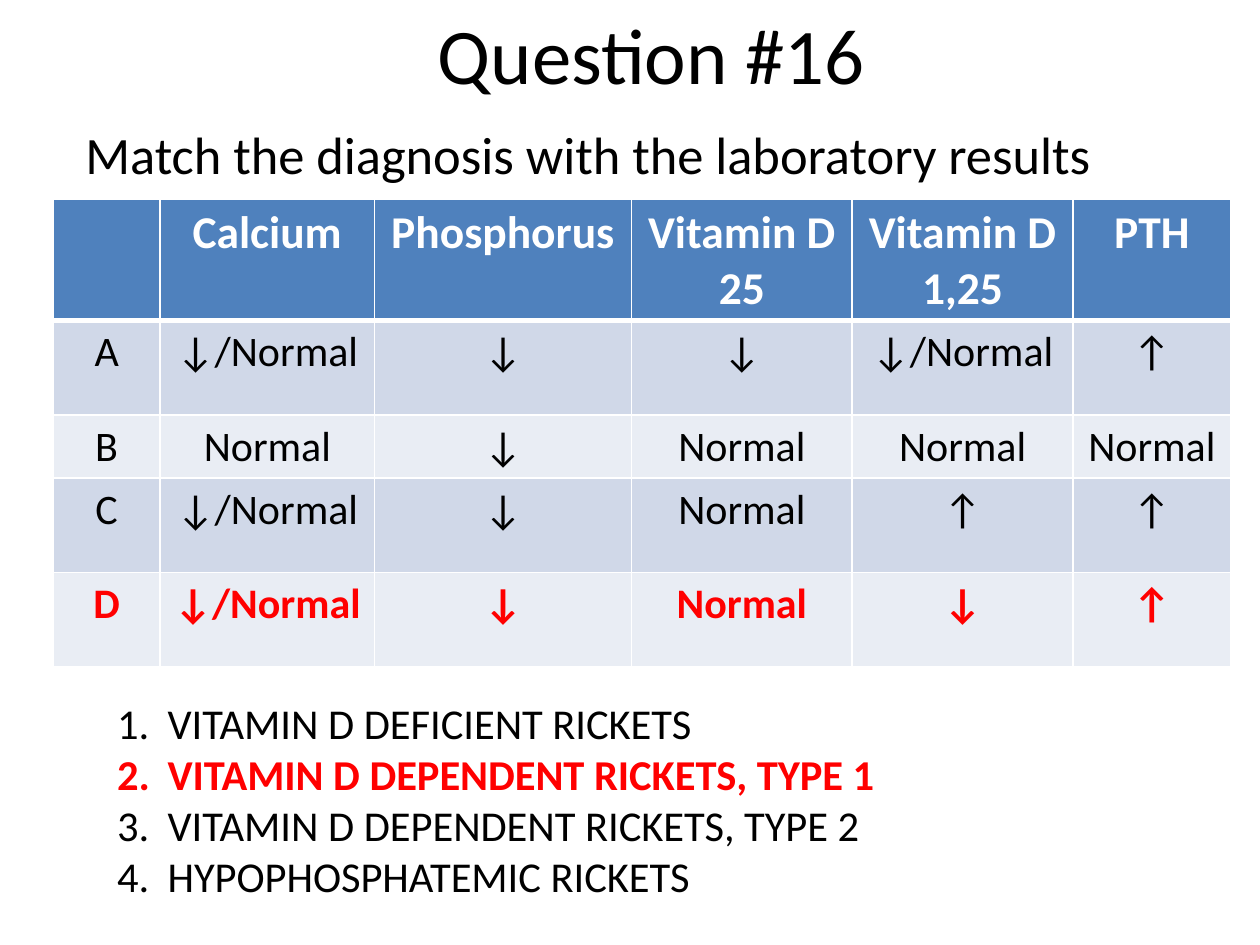
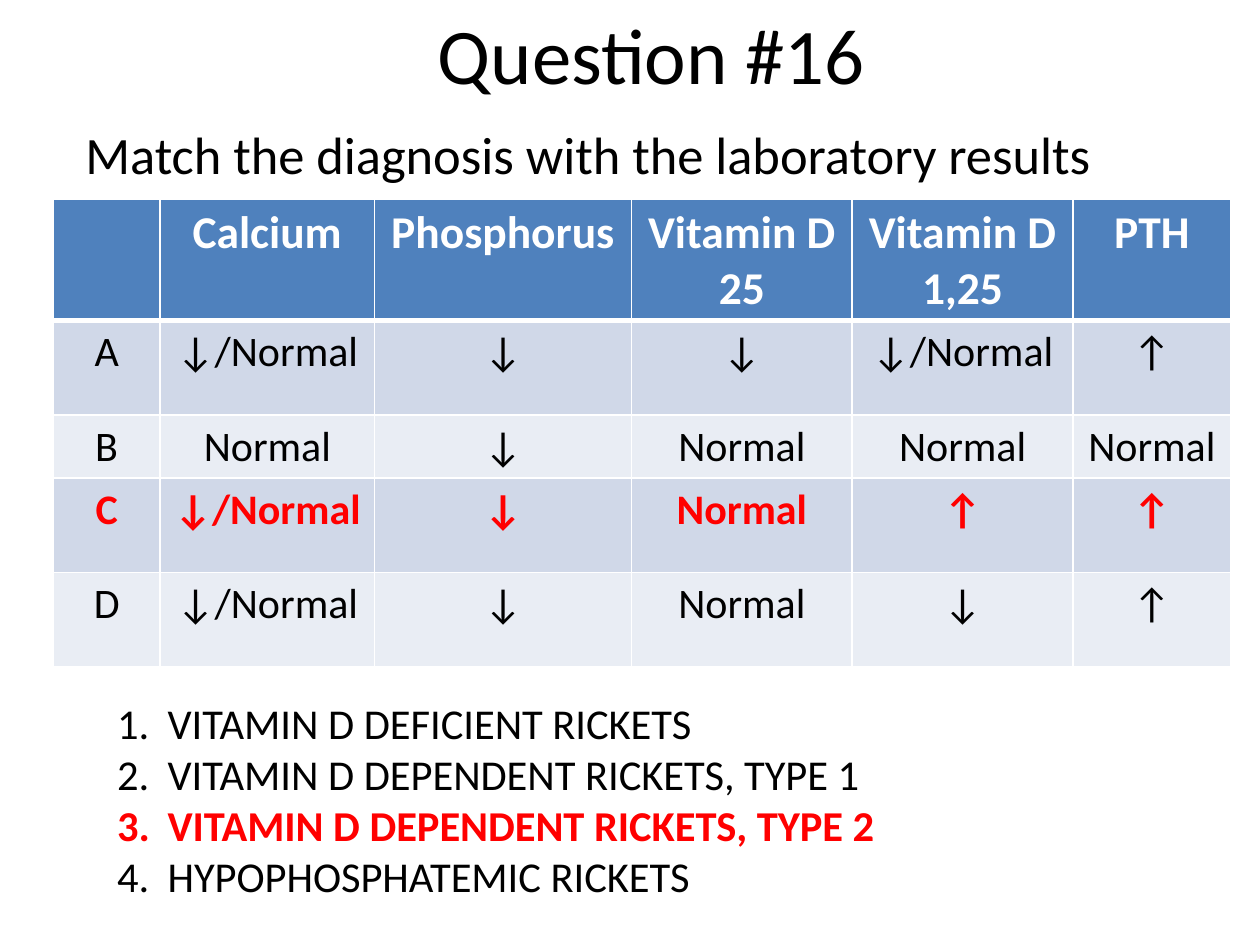
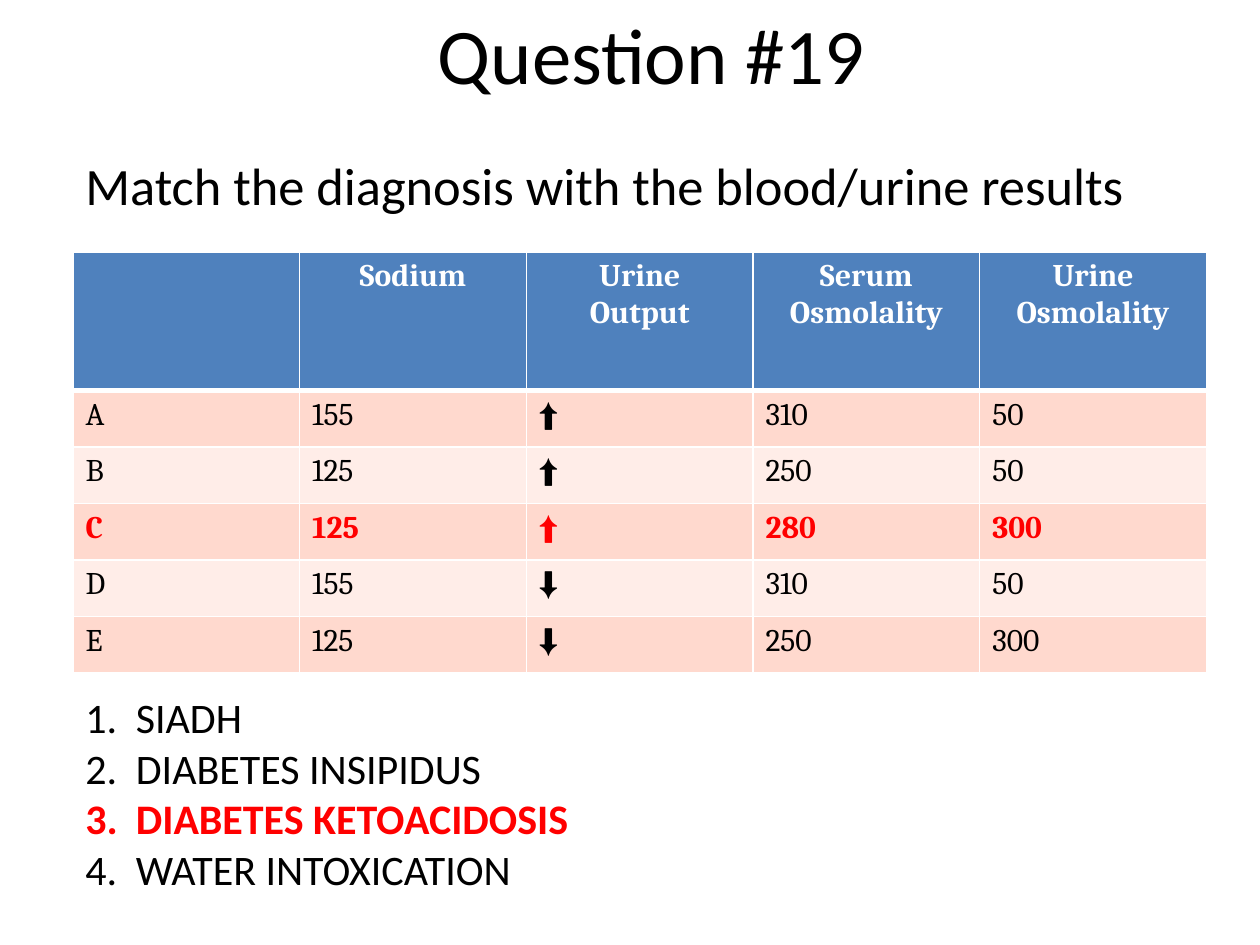
from pptx import Presentation
from pptx.dml.color import RGBColor
from pptx.enum.text import MSO_ANCHOR, PP_ALIGN
from pptx.oxml.ns import qn
from pptx.util import Cm, Pt
from lxml.etree import SubElement

COLORS = {"text": "000000", "answer": "FF0000", "white": "FFFFFF", "header": "4F81BD"}
BLUE_BANDS = ("D0D8E8", "E9EDF4")
PINK_BANDS = ("FFD9CE", "FFEDE8")

RICKETS = {
    "title": "Question #16",
    "prompt": "Match the diagnosis with the laboratory results",
    "prompt_top": 2.34,
    "table": [
        ("", "Calcium", "Phosphorus", "Vitamin D 25", "Vitamin D 1,25", "PTH"),
        ("A", "↓/Normal", "↓", "↓", "↓/Normal", "↑"),
        ("B", "Normal", "↓", "Normal", "Normal", "Normal"),
        ("C", "↓/Normal", "↓", "Normal", "↑", "↑"),
        ("D", "↓/Normal", "↓", "Normal", "↓", "↑"),
    ],
    "table_at": (1.07, 4.01),
    "cols": (2.16, 4.32, 5.18, 4.45, 4.45, 3.18),
    "rows": (2.41, 1.9, 1.27, 1.9, 1.9),
    "bands": BLUE_BANDS,
    "font": "Calibri",
    "header_size": 26,
    "body_size": 24,
    "body_align": PP_ALIGN.CENTER,
    "choices": [
        "VITAMIN D DEFICIENT RICKETS",
        "VITAMIN D DEPENDENT RICKETS, TYPE 1",
        "VITAMIN D DEPENDENT RICKETS, TYPE 2",
        "HYPOPHOSPHATEMIC RICKETS",
    ],
    "choices_box": (2.11, 13.94, 20.75, 4.32),
    "choices_size": 24.3,
}

SODIUM = {
    "title": "Question #19",
    "prompt": "Match the diagnosis with the blood/urine results",
    "prompt_top": 2.97,
    "table": [
        ("", "Sodium", "Urine\nOutput", "Serum Osmolality", "Urine Osmolality"),
        ("A", "155", "⬆", "310", "50"),
        ("B", "125", "⬆", "250", "50"),
        ("C", "125", "⬆", "280", "300"),
        ("D", "155", "⬇", "310", "50"),
        ("E", "125", "⬇", "250", "300"),
    ],
    "table_at": (1.47, 5.08),
    "cols": (4.57,) * 5,
    "rows": (2.79,) + (1.14,) * 5,
    "bands": PINK_BANDS,
    "font": "Cambria",
    "header_size": 18,
    "body_size": 18,
    "body_align": PP_ALIGN.LEFT,
    "choices": [
        "SIADH",
        "DIABETES INSIPIDUS",
        "DIABETES KETOACIDOSIS",
        "WATER INTOXICATION",
    ],
    "choices_box": (1.47, 13.54, 20.75, 4.88),
    "choices_size": 24,
}

SLIDES = [
    (RICKETS, "D", 2),
    (RICKETS, "C", 3),
    (SODIUM, "C", 3),
]


def write(tf, text, size, font="Calibri", color="text", bold=False,
          align=PP_ALIGN.LEFT, answer=None, numbered=False):
    for i, line in enumerate(text.split("\n"), 1):
        p = tf.paragraphs[0] if i == 1 else tf.add_paragraph()
        p.alignment = align
        if numbered:
            pPr = p._p.get_or_add_pPr()
            pPr.set("marL", str(Cm(1.02)))
            pPr.set("indent", str(-Cm(1.02)))
            SubElement(pPr, qn("a:buFont"), typeface="+mj-lt")
            SubElement(pPr, qn("a:buAutoNum"), type="arabicPeriod")
        if line:
            r = p.add_run()
            r.text = line
            r.font.name = font
            r.font.size = Pt(size)
            r.font.bold = bold or i == answer
            name = "answer" if i == answer else color
            r.font.color.rgb = RGBColor.from_string(COLORS[name])


def add_text(s, box, text, size, anchor=MSO_ANCHOR.TOP, **fmt):
    tf = s.shapes.add_textbox(*map(Cm, box)).text_frame
    tf.word_wrap = True
    tf.vertical_anchor = anchor
    write(tf, text, size, **fmt)


def add_borders(cell, top, bottom):
    tcPr = cell._tc.get_or_add_tcPr()
    widths = {"a:lnL": 1, "a:lnR": 1, "a:lnT": top, "a:lnB": bottom}
    for tag, width in widths.items():
        ln = SubElement(tcPr, qn(tag), w=str(Pt(width)))
        fill = SubElement(ln, qn("a:solidFill"))
        SubElement(fill, qn("a:srgbClr"), val=COLORS["white"])


def add_results(s, q, answer_row):
    cols, rows = q["cols"], q["rows"]
    box = (*q["table_at"], sum(cols), sum(rows))
    table = s.shapes.add_table(len(rows), len(cols), *map(Cm, box)).table
    for column, width in zip(table.columns, cols):
        column.width = Cm(width)
    for i, (row, height) in enumerate(zip(q["table"], rows)):
        table.rows[i].height = Cm(height)
        for j, text in enumerate(row):
            cell = table.cell(i, j)
            add_borders(cell, 3 if i == 1 else 1, 3 if i == 0 else 1)
            cell.fill.solid()
            fill = COLORS["header"] if i == 0 else q["bands"][(i - 1) % 2]
            cell.fill.fore_color.rgb = RGBColor.from_string(fill)
            if i == 0:
                write(cell.text_frame, text, q["header_size"], font=q["font"],
                      color="white", bold=True, align=PP_ALIGN.CENTER)
            else:
                is_answer = row[0] == answer_row
                write(cell.text_frame, text, q["body_size"],
                      font="Arial" if text in ("⬆", "⬇") else q["font"],
                      color="answer" if is_answer else "text",
                      bold=is_answer, align=q["body_align"])


def add_question(prs, q, answer_row, answer_choice):
    s = prs.slides.add_slide(prs.slide_layouts[6])
    add_text(s, (1.7, 0, 22.86, 3.18), q["title"], 45, align=PP_ALIGN.CENTER)
    add_text(s, (1.47, q["prompt_top"], 23.06, 1.55), q["prompt"], 30)
    add_results(s, q, answer_row)
    add_text(s, q["choices_box"], "\n".join(q["choices"]), q["choices_size"],
             anchor=MSO_ANCHOR.MIDDLE, answer=answer_choice, numbered=True)


def main():
    prs = Presentation()
    prs.slide_width, prs.slide_height = Cm(25.4), Cm(19.05)
    for question in SLIDES:
        add_question(prs, *question)
    prs.save("out.pptx")


if __name__ == "__main__":
    main()
